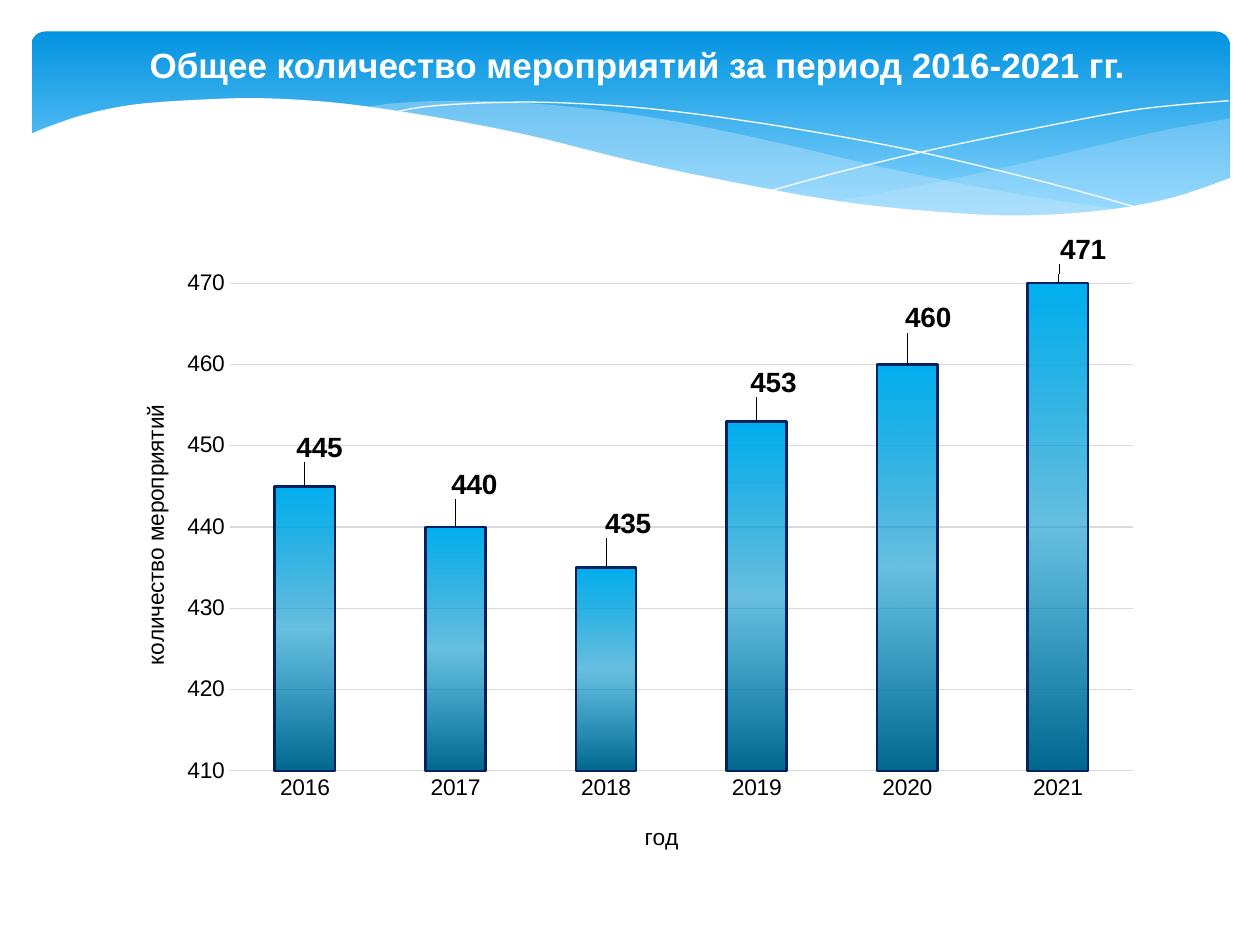
"""Build a slide with a wave banner and a column chart of yearly event counts."""
from dataclasses import dataclass
from typing import Optional

from lxml import etree
from pptx import Presentation
from pptx import util as u
from pptx.chart.data import CategoryChartData
from pptx.dml.color import RGBColor
from pptx.enum import chart as charts, shapes, text
from pptx.oxml import ns

Points = list[tuple[float, float]]
BLACK, WHITE, MIST = "000000", "FFFFFF", "C6E7FC"


@dataclass
class Wave:
    edges: list[Points]
    fill: Optional[str] = None
    alpha: int = 100
    line: Optional[str] = None


@dataclass
class Year:
    name: str
    events: int
    label_dx: float
    label_dy: float


WAVES = [
    Wave([[(9.76, 0.94), (9.21, 1.04), (8.61, 1.18), (7.79, 1.37), (7.06, 1.52), (6.61, 1.6)],
          [(6.61, 1.6), (7.19, 1.67), (7.81, 1.72), (8.35, 1.72), (8.81, 1.67),
           (9.28, 1.58), (9.76, 1.41)]], MIST, 29),
    Wave([[(8.93, 1.67), (8.07, 1.54), (7.06, 1.34), (6.29, 1.16), (5.55, 1), (4.89, 0.89),
           (4.2, 0.82), (3.61, 0.8), (3.13, 0.82), (2.86, 0.86)],
          [(2.86, 0.86), (3.42, 0.94), (4.04, 1.06), (4.91, 1.26), (5.66, 1.43), (6.34, 1.56),
           (6.95, 1.65), (7.61, 1.71), (8.18, 1.73), (8.57, 1.71), (8.93, 1.67)]], MIST, 40),
    Wave([[(3.09, 0.9), (3.44, 0.84), (4.16, 0.81), (4.89, 0.84), (5.56, 0.91), (6.36, 1.03),
           (7.27, 1.2), (8.31, 1.45), (9.07, 1.66)]], line=WHITE),
    Wave([[(6.13, 1.51), (6.72, 1.35), (7.48, 1.17), (8.36, 0.99), (8.95, 0.88),
           (9.38, 0.83), (9.75, 0.8)]], line=WHITE),
    Wave([[(9.77, 1.41), (9.3, 1.57), (8.75, 1.67), (8.09, 1.71), (7.44, 1.68), (6.68, 1.6),
           (5.79, 1.44), (5.03, 1.28), (4.18, 1.07), (3.4, 0.92), (2.71, 0.82), (2.11, 0.78),
           (1.61, 0.79), (1.06, 0.83), (0.67, 0.91), (0.4, 1), (0.23, 1.07)],
          [(0.23, 2.24), (9.77, 2.24)]], WHITE),
]
YEARS = [
    Year("2016", 445, 0.014, -0.03),
    Year("2017", 440, 0.018, -0.035),
    Year("2018", 435, 0.021, -0.038),
    Year("2019", 453, 0.016, -0.03),
    Year("2020", 460, 0.02, -0.042),
    Year("2021", 471, 0.024, -0.022),
]


def color(value: str) -> RGBColor:
    return RGBColor.from_string(value)


def set_font(font, size: float, shade: str = BLACK, bold: bool = False) -> None:
    font.name, font.size, font.bold = "Arial", u.Pt(size), bold
    font.color.rgb = color(shade)


def set_alpha(clr, percent: int) -> None:
    etree.SubElement(clr, ns.qn("a:alpha")).set("val", str(percent * 1000))


def set_gradient(fill, element, stops: list[tuple[int, str, int]], angle: int) -> None:
    fill.gradient()
    fill.gradient_angle = angle
    stop_list = next(element.iter(ns.qn("a:gsLst")))
    for old in list(stop_list):
        stop_list.remove(old)
    for position, shade, alpha in stops:
        stop = etree.SubElement(stop_list, ns.qn("a:gs"), pos=str(position * 1000))
        set_alpha(etree.SubElement(stop, ns.qn("a:srgbClr"), val=shade), alpha)


def smooth(points: Points, steps: int = 5) -> Points:
    """Sample a Catmull-Rom curve through the points."""
    if len(points) < 3:
        return points
    padded = [points[0], *points, points[-1]]
    curve = [points[0]]
    for a, b, c, d in zip(padded, padded[1:], padded[2:], padded[3:]):
        for t in (step / steps for step in range(1, steps + 1)):
            curve.append(tuple(
                0.5 * (2 * q + (r - p) * t + (2 * p - 5 * q + 4 * r - s) * t ** 2
                       + (3 * q - p - 3 * r + s) * t ** 3)
                for p, q, r, s in zip(a, b, c, d)))
    return curve


def draw_wave(page, wave: Wave) -> None:
    points = [(u.Inches(x), u.Inches(y)) for edge in wave.edges for x, y in smooth(edge)]
    builder = page.shapes.build_freeform(*points[0], scale=1.0)
    builder.add_line_segments(points[1:], close=wave.fill is not None)
    shape = builder.convert_to_shape()
    shape.shadow.inherit = False
    if wave.fill:
        shape.fill.solid()
        shape.fill.fore_color.rgb = color(wave.fill)
        set_alpha(next(shape.element.iter(ns.qn("a:srgbClr"))), wave.alpha)
    else:
        shape.fill.background()
    if wave.line:
        shape.line.color.rgb = color(wave.line)
        shape.line.width = 0
    else:
        shape.line.fill.background()


def draw_banner(page) -> None:
    banner = page.shapes.add_shape(shapes.MSO_SHAPE.ROUNDED_RECTANGLE, u.Inches(0.25),
                                   u.Inches(0.25), u.Inches(9.51), u.Inches(1.56))
    banner.adjustments[0] = 0.07
    banner.shadow.inherit = False
    banner.line.fill.background()
    set_gradient(banner.fill, banner.element, [(0, "0293E0", 100), (90, "83D3FE", 100)], 270)
    for wave in WAVES:
        draw_wave(page, wave)


def draw_title(page, wording: str) -> None:
    box = page.shapes.title
    box.left, box.top = u.Inches(1.06), u.Inches(0.29)
    box.width, box.height = u.Inches(8), u.Inches(0.44)
    frame = box.text_frame
    frame.text = wording
    frame.word_wrap = False
    frame.vertical_anchor = text.MSO_ANCHOR.MIDDLE
    para = frame.paragraphs[0]
    para.alignment = text.PP_ALIGN.CENTER
    set_font(para.font, 20, WHITE, True)
    page.shapes._spTree.append(box.element)


def place(parent, index: int, **values) -> None:
    """Give a chart part a manual layout."""
    for old in parent.findall(ns.qn("c:layout")):
        parent.remove(old)
    layout = etree.Element(ns.qn("c:layout"))
    manual = etree.SubElement(layout, ns.qn("c:manualLayout"))
    for name, value in values.items():
        etree.SubElement(manual, ns.qn(f"c:{name}"), val=str(value))
    parent.insert(index, layout)


def style_axis(axis, wording: str, x: float, y: float) -> None:
    axis.major_tick_mark = axis.minor_tick_mark = charts.XL_TICK_MARK.NONE
    axis.format.line.fill.background()
    set_font(axis.tick_labels.font, 13)
    frame = axis.axis_title.text_frame
    frame.text = wording
    set_font(frame.paragraphs[0].font, 13)
    place(axis.axis_title._element, 1, xMode="edge", yMode="edge", x=x, y=y)


def draw_chart(page) -> None:
    data = CategoryChartData()
    data.categories = [year.name for year in YEARS]
    data.add_series("Мероприятия", [year.events for year in YEARS])
    chart = page.shapes.add_chart(charts.XL_CHART_TYPE.COLUMN_CLUSTERED, u.Inches(0.84),
                                  u.Inches(1.86), u.Inches(8.32), u.Inches(5.04), data).chart
    chart.has_legend = chart.has_title = False
    set_font(chart.font, 10)
    plot = chart.plots[0]
    plot.gap_width, plot.vary_by_categories = 150, False
    place(plot._element.getparent(), 0, layoutTarget="inner", xMode="edge", yMode="edge",
          x=0.118, y=0.071, w=0.862, h=0.773)

    style_axis(chart.category_axis, "год", 0.51, 0.92)
    values = chart.value_axis
    style_axis(values, "количество мероприятий", 0.03, 0.26)
    values.axis_title.text_frame._txBody.bodyPr.set("rot", "-5400000")
    values.minimum_scale, values.maximum_scale, values.major_unit = 410, 470, 10
    values.major_gridlines.format.line.color.rgb = color("D9D9D9")
    values.major_gridlines.format.line.width = u.Pt(0.75)

    series = plot.series[0]
    set_gradient(series.format.fill, series._element,
                 [(0, "00688E", 100), (50, "0094CA", 59), (100, "00B0F0", 100)], 90)
    series.format.line.color.rgb = color("002060")
    series.format.line.width = u.Pt(1.5)
    for index, year in enumerate(YEARS):
        label = series.points[index].data_label
        set_font(label.font, 16, BLACK, True)
        label.position = charts.XL_LABEL_POSITION.OUTSIDE_END
        place(label._dLbl, 1, x=year.label_dx, y=year.label_dy)


def main() -> None:
    deck = Presentation()
    deck.slide_width, deck.slide_height = u.Inches(10), u.Inches(7.5)
    page = deck.slides.add_slide(deck.slide_layouts[5])
    draw_banner(page)
    draw_title(page, "Общее количество мероприятий за период 2016-2021 гг.")
    draw_chart(page)
    deck.save("out.pptx")


if __name__ == "__main__":
    main()
